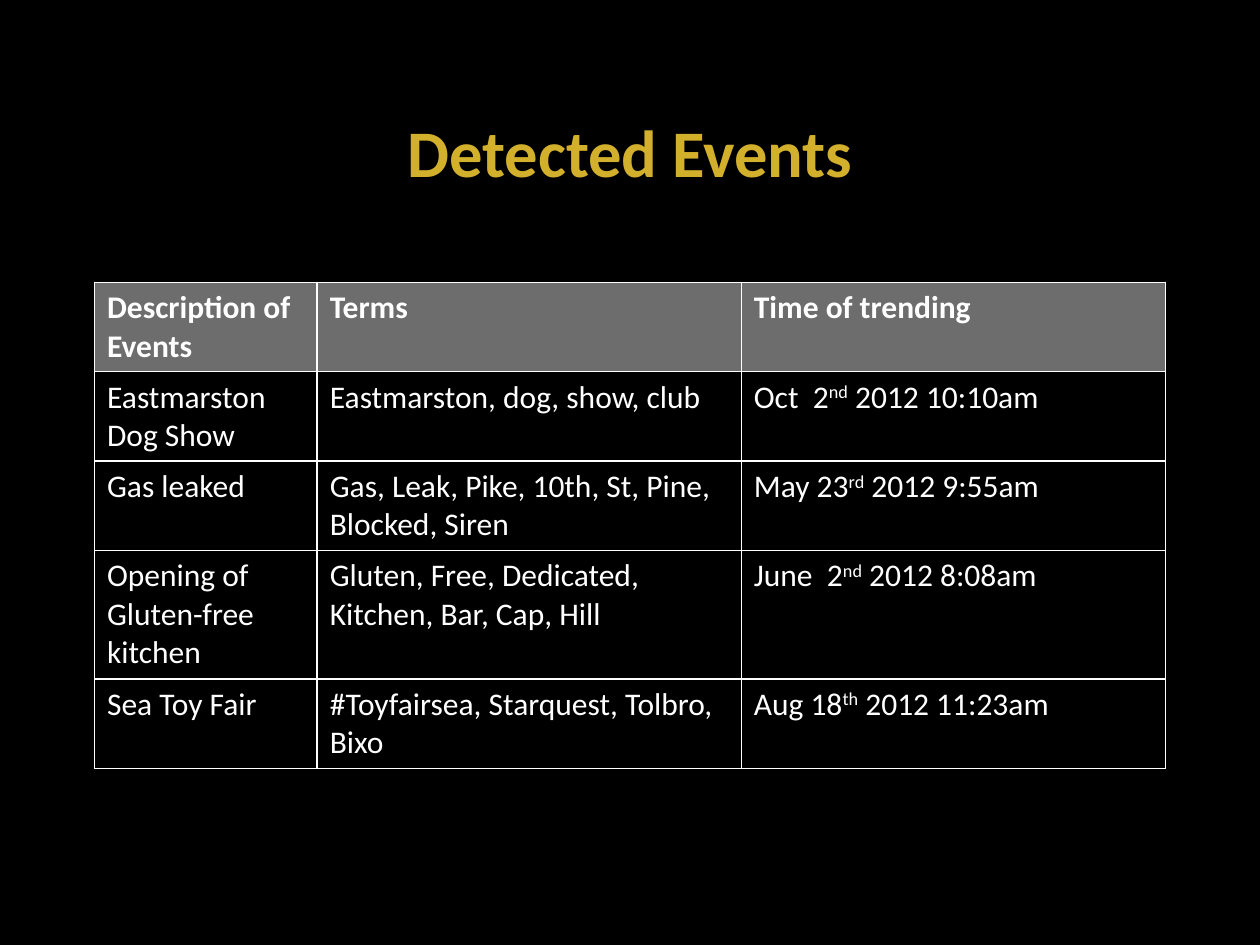
from dataclasses import dataclass

from lxml import etree
from pptx import Presentation
from pptx.dml.color import RGBColor
from pptx.enum.text import MSO_ANCHOR, PP_ALIGN
from pptx.oxml.ns import qn
from pptx.util import Inches, Pt

CENTER, LEFT = PP_ALIGN.CENTER, PP_ALIGN.LEFT
MIDDLE = MSO_ANCHOR.MIDDLE


@dataclass(frozen=True)
class Theme:
    """Colours, type sizes and line widths of the deck."""
    font: str = "Calibri"
    background: str = "000000"
    title: str = "D3B02C"
    text: str = "FFFFFF"
    header: str = "6D6D6D"
    border: str = "FFFFFF"
    title_size: int = 38
    table_size: int = 18
    border_width: int = 1


THEME = Theme()
WIDTH, HEIGHT = Inches(10), Inches(7.5)
MARGIN = 0.075
COLUMN_SHARES = (0.208, 0.396, 0.396)
ROW_INCHES = (0.71, 0.71, 0.71, 1.02, 0.71)
HEADINGS = ("Description of Events", "Terms", "Time of trending")
EVENTS = (
    ("Eastmarston Dog Show", "Eastmarston, dog, show, club",
     ("Oct  2", "nd", " 2012 10:10am")),
    ("Gas leaked", "Gas, Leak, Pike, 10th, St, Pine, Blocked, Siren",
     ("May 23", "rd", " 2012 9:55am")),
    ("Opening of Gluten-free kitchen",
     "Gluten, Free, Dedicated, Kitchen, Bar, Cap, Hill",
     ("June  2", "nd", " 2012 8:08am")),
    ("Sea Toy Fair", "#Toyfairsea, Starquest, Tolbro, Bixo",
     ("Aug 18", "th", " 2012 11:23am")),
)


def write(frame, text, size, color, bold=False, align=LEFT):
    """Write a string, or a (base, superscript, base) tuple, in one paragraph."""
    para = frame.paragraphs[0]
    para.alignment = align
    for index, part in enumerate((text,) if isinstance(text, str) else text):
        span = para.add_run()
        span.text = part
        span.font.name, span.font.size, span.font.bold = THEME.font, Pt(size), bold
        span.font.color.rgb = RGBColor.from_string(color)
        if index == 1:
            span.font._element.set("baseline", "30000")


def set_borders(cell):
    """Draw a solid line on all four sides of a cell."""
    properties = cell._tc.get_or_add_tcPr()
    for side in ("lnL", "lnR", "lnT", "lnB"):
        line = etree.SubElement(properties, qn(f"a:{side}"),
                                w=str(Pt(THEME.border_width)))
        fill = etree.SubElement(line, qn("a:solidFill"))
        etree.SubElement(fill, qn("a:srgbClr"), val=THEME.border)


def add_title(page, left, top, width, height):
    """Place the centred slide title in the given box."""
    box = page.shapes.add_textbox(left, top, width, height)
    frame = box.text_frame
    frame.word_wrap = True
    frame.vertical_anchor = MIDDLE
    write(frame, "Detected Events", THEME.title_size, THEME.title,
          bold=True, align=CENTER)


def add_events(page, left, top, width, height):
    """Place the table of events in the given box."""
    rows = (HEADINGS, *EVENTS)
    table = page.shapes.add_table(len(rows), len(HEADINGS),
                                  left, top, width, height).table
    table.horz_banding = False
    for column, share in zip(table.columns, COLUMN_SHARES):
        column.width = int(width * share)
    for row, inches, texts in zip(table.rows, ROW_INCHES, rows):
        row.height = Inches(inches)
        heading = texts is HEADINGS
        for cell, text in zip(row.cells, texts):
            set_borders(cell)
            if heading:
                cell.fill.solid()
                cell.fill.fore_color.rgb = RGBColor.from_string(THEME.header)
            else:
                cell.fill.background()
            write(cell.text_frame, text, THEME.table_size, THEME.text, bold=heading)


def main():
    """Build and save the deck."""
    deck = Presentation()
    deck.slide_width, deck.slide_height = WIDTH, HEIGHT
    page = deck.slides.add_slide(deck.slide_layouts[6])
    page.background.fill.solid()
    page.background.fill.fore_color.rgb = RGBColor.from_string(THEME.background)
    left, width = int(WIDTH * MARGIN), int(WIDTH * (1 - 2 * MARGIN))
    add_title(page, left, int(HEIGHT * 0.09), width, int(HEIGHT * 0.14))
    add_events(page, left, Inches(2.24), width, Inches(sum(ROW_INCHES)))
    deck.save("out.pptx")


if __name__ == "__main__":
    main()
